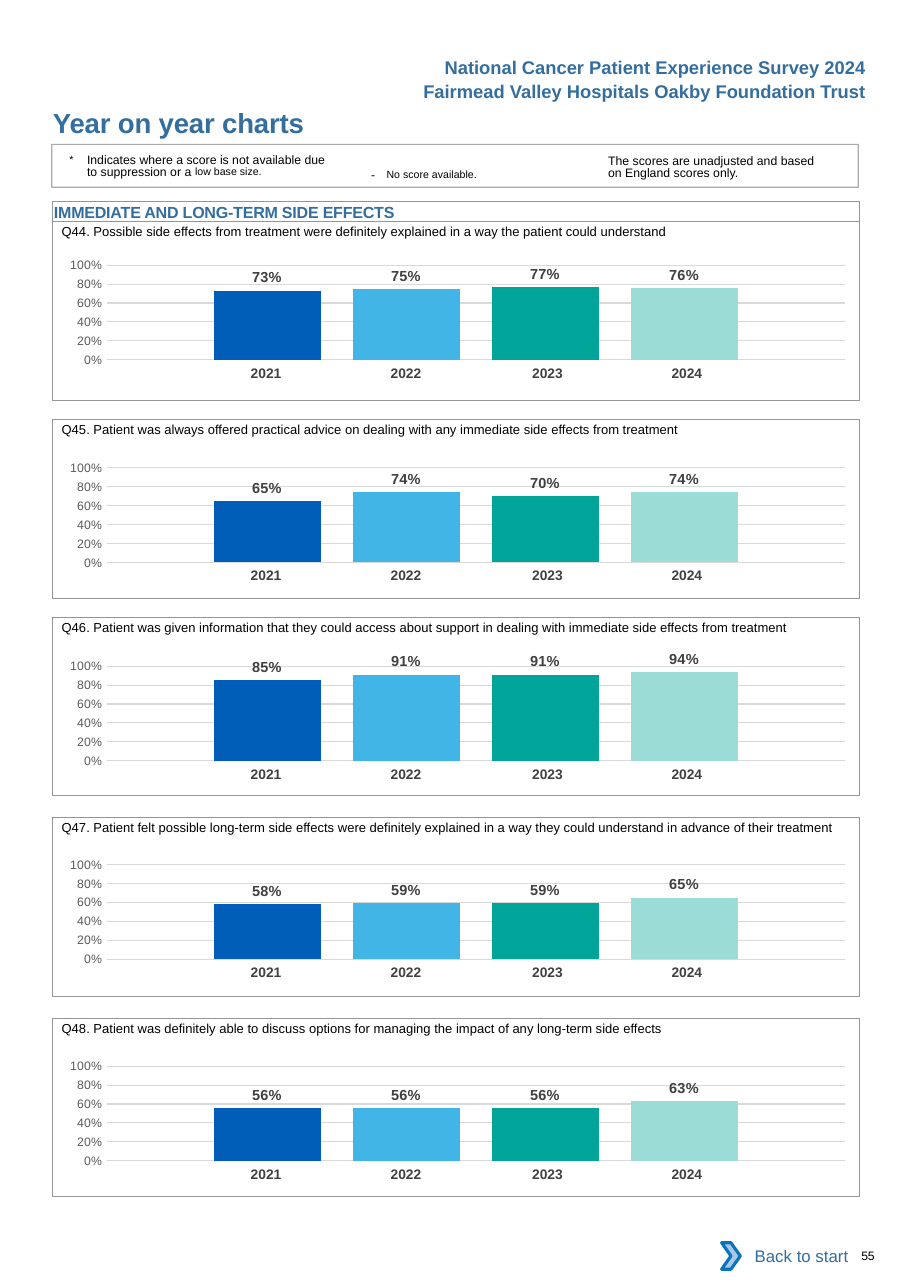
from lxml.etree import SubElement
from pptx import Presentation
from pptx.chart.data import CategoryChartData
from pptx.dml.color import RGBColor
from pptx.enum.chart import XL_CHART_TYPE, XL_LABEL_POSITION, XL_TICK_MARK
from pptx.enum.shapes import MSO_SHAPE
from pptx.enum.text import MSO_ANCHOR, PP_ALIGN
from pptx.oxml import parse_xml
from pptx.oxml.ns import nsdecls, qn
from pptx.util import Inches, Pt

BLUE = RGBColor(0x33, 0x6E, 0x9F)
BLACK = RGBColor(0, 0, 0)
WHITE = RGBColor(0xFF, 0xFF, 0xFF)
BORDER = RGBColor(0x93, 0x95, 0x98)
YEAR_GREY = RGBColor(0x41, 0x40, 0x42)
AXIS_GREY = RGBColor(0x59, 0x59, 0x59)
LABEL_GREY = RGBColor(0x40, 0x40, 0x40)
GRID_GREY = RGBColor(0xD9, 0xD9, 0xD9)
ARROW_FILL = RGBColor(0xA8, 0xC7, 0xE9)
ARROW_LINE = RGBColor(0x0A, 0x74, 0xBB)
YEAR_COLOURS = {
    "2021": RGBColor(0x00, 0x5E, 0xB8),
    "2022": RGBColor(0x41, 0xB6, 0xE6),
    "2023": RGBColor(0x00, 0xA4, 0x99),
    "2024": RGBColor(0x9C, 0xDC, 0xD7),
}
LEFT, WIDTH = 0.48, 7.32
PANEL_HEIGHT = 1.62

# Question, panel top, chart top, scores by year
QUESTIONS = [
    ("Q44. Possible side effects from treatment were definitely explained in a way "
     "the patient could understand", 2.01, 2.22, (0.73, 0.75, 0.77, 0.76)),
    ("Q45. Patient was always offered practical advice on dealing with any immediate "
     "side effects from treatment", 3.81, 4.06, (0.65, 0.74, 0.70, 0.74)),
    ("Q46. Patient was given information that they could access about support in "
     "dealing with immediate side effects from treatment",
     5.60, 5.86, (0.85, 0.91, 0.91, 0.94)),
    ("Q47. Patient felt possible long-term side effects were definitely explained in "
     "a way they could understand in advance of their treatment",
     7.42, 7.66, (0.58, 0.59, 0.59, 0.65)),
    ("Q48. Patient was definitely able to discuss options for managing the impact of "
     "any long-term side effects", 9.24, 9.49, (0.56, 0.56, 0.56, 0.63)),
]

prs = Presentation()
prs.slide_width, prs.slide_height = Inches(8.26), Inches(11.69)
s = prs.slides.add_slide(prs.slide_layouts[5])


def write(sp, runs, size, color=BLACK, bold=False, align=PP_ALIGN.LEFT,
          insets=(0, 0, 0, 0), anchor=MSO_ANCHOR.TOP, wrap=True):
    """Fill a shape with one paragraph; runs are (text, size, baseline %, spacing)."""
    tf = sp.text_frame
    sides = ("margin_left", "margin_top", "margin_right", "margin_bottom")
    for side, inset in zip(sides, insets):
        setattr(tf, side, Inches(inset))
    tf.word_wrap, tf.vertical_anchor = wrap, anchor
    p = tf.paragraphs[0]
    p.alignment = align
    for text, run_size, baseline, spacing in [(runs, size, 0, 0)] if isinstance(runs, str) else runs:
        r = p.add_run()
        r.text = text
        look = {"name": "Arial", "size": Pt(run_size), "bold": bold}
        for key, value in look.items():
            setattr(r.font, key, value)
        r.font.color.rgb = color
        rPr = r._r.get_or_add_rPr()
        for key, value in {"baseline": baseline * 1000, "spc": round(spacing * 100)}.items():
            if value:
                rPr.set(key, str(value))
    return p


def box(x, y, w, h, kind=MSO_SHAPE.RECTANGLE, fill=None, line=BORDER, weight=0.5):
    sp = s.shapes.add_shape(kind, Inches(x), Inches(y), Inches(w), Inches(h))
    sp.shadow.inherit = False
    for part, color in ((sp.fill, fill), (sp.line.fill, line)):
        if color is None:
            part.background()
        else:
            part.solid()
            part.fore_color.rgb = color
    if line is not None:
        sp.line.width = Pt(weight)
    return sp


# Page title
title = s.shapes.title
title.left, title.top, title.width, title.height = map(Inches, (0.47, 0.96, 4.5, 0.3))
write(title, [("Year on year charts", 18, 0, -0.1)], 18, BLUE, True, insets=(0.01, 0, 0, 0))

# Survey and trust names
for text, y in (("National Cancer Patient Experience Survey 2024", 0.46),
                ("Fairmead Valley Hospitals Oakby Foundation Trust", 0.68)):
    sp = s.shapes.add_textbox(Inches(3.67), Inches(y), Inches(4.29), Inches(0.3))
    write(sp, text, 12, BLUE, True, PP_ALIGN.RIGHT, (0.1, 0.05, 0.1, 0.05), wrap=False)

# Legend
legend = box(0.47, 1.31, WIDTH, 0.39, weight=0.75)
line_color = legend._element.spPr.find(qn("a:ln")).find(".//" + qn("a:srgbClr"))
SubElement(line_color, qn("a:alpha")).set("val", "80000")
sp = s.shapes.add_textbox(Inches(0.63), Inches(1.38), Inches(2.72), Inches(0.27))
p = write(sp, [("*\t", 12, 3, 0),
               ("Indicates where a score is not available due to suppression or a ", 8, 0, 0),
               ("low base size.", 12, 7, 0)], 8, insets=(0, 0.03, 0.33, 0))
p.line_spacing = Pt(8.1)
pPr = p._p.get_or_add_pPr()
pPr.set("marL", str(Inches(0.16)))
pPr.set("indent", str(-Inches(0.16)))
sp = s.shapes.add_textbox(Inches(3.27), Inches(1.41), Inches(1.83), Inches(0.24))
write(sp, [("- ", 8, 0, 2.6), ("No score available.", 12, 3, 0)], 8,
      insets=(0.1, 0.05, 0.1, 0.05))
sp = s.shapes.add_textbox(Inches(5.52), Inches(1.38), Inches(2.01), Inches(0.27))
p = write(sp, "The scores are unadjusted and based on England scores only.", 8,
          insets=(0, 0.03, 0, 0))
p.line_spacing = Pt(8.1)

# Section heading
write(box(LEFT, 1.83, WIDTH, 0.18), [("IMMEDIATE AND LONG-TERM SIDE EFFECTS", 10.5, 0, -0.1)],
      10.5, BLUE, True, insets=(0.01, 0.01, 0, 0))

for question, panel_top, chart_top, scores in QUESTIONS:
    # Panel and question
    box(LEFT, panel_top, WIDTH, PANEL_HEIGHT)
    sp = s.shapes.add_textbox(Inches(0.55), Inches(panel_top - 0.07), Inches(7.24), Inches(0.24))
    write(sp, question, 8.5, insets=(0.01, 0.09, 0, 0))

    # Column chart, one series a year
    data = CategoryChartData(number_format="0%")
    data.categories = ["1"]
    for year, score in zip(YEAR_COLOURS, scores):
        data.add_series(year, [score])
    chart = s.shapes.add_chart(XL_CHART_TYPE.COLUMN_CLUSTERED, Inches(0.39), Inches(chart_top),
                               Inches(WIDTH), Inches(1.29), data).chart
    chart.has_legend = chart.has_title = False
    chart.font.name, chart.font.size = "Calibri", Pt(10)
    chart.category_axis.visible = False
    axis = chart.value_axis
    axis.minimum_scale, axis.maximum_scale, axis.major_unit = 0, 1, 0.2
    axis.major_tick_mark = axis.minor_tick_mark = XL_TICK_MARK.NONE
    axis.format.line.fill.background()
    axis.major_gridlines.format.line.color.rgb = GRID_GREY
    axis.major_gridlines.format.line.width = Pt(0.75)
    labels = axis.tick_labels
    labels.number_format, labels.number_format_is_linked = "0%", False
    labels.font.name, labels.font.size = "Arial", Pt(8)
    labels.font.color.rgb = AXIS_GREY
    plot = chart.plots[0]
    plot.gap_width, plot.overlap, plot.vary_by_categories = 200, -30, False
    for series, color in zip(plot.series, YEAR_COLOURS.values()):
        series.format.fill.solid()
        series.format.fill.fore_color.rgb = color
        labels = series.data_labels
        look = {"show_value": True, "position": XL_LABEL_POSITION.OUTSIDE_END,
                "number_format": "0%", "number_format_is_linked": False}
        for key, value in look.items():
            setattr(labels, key, value)
        labels.font.name, labels.font.size, labels.font.bold = "Arial", Pt(9.5), True
        labels.font.color.rgb = LABEL_GREY

    # Fixed inner plot area
    area = chart._chartSpace.chart.plotArea
    for layout in area.findall(qn("c:layout")):
        area.remove(layout)
    settings = {"layoutTarget": "inner", "xMode": "edge", "yMode": "edge",
                "x": 0.079, "y": 0.145, "w": 0.915, "h": 0.666}
    marks = "".join(f'<c:{key} val="{value}"/>' for key, value in settings.items())
    area.insert(0, parse_xml(f'<c:layout {nsdecls("c")}><c:manualLayout>{marks}'
                             '</c:manualLayout></c:layout>'))

    # Year row below the columns
    table = s.shapes.add_table(1, 4, Inches(1.73), Inches(chart_top + 1.05),
                               Inches(5.15), Inches(0.27)).table
    table.first_row = table.horz_banding = False
    table._tbl.tblPr.find(qn("a:tableStyleId")).text = "{2D5ABB26-0587-4C30-8999-92F81FD0307C}"
    for i, (year, width, right) in enumerate(zip(YEAR_COLOURS, (1.27, 1.27, 1.34, 1.27),
                                                 (0, 0, 0.04, 0.12))):
        table.columns[i].width = Inches(width)
        cell = table.cell(0, i)
        cell.fill.background()
        cell.margin_left, cell.margin_right = Inches(0.1), Inches(right)
        p = cell.text_frame.paragraphs[0]
        p.text, p.alignment = year, PP_ALIGN.CENTER
        p.font.name, p.font.size, p.font.bold = "Arial", Pt(9), True
        p.font.color.rgb = YEAR_GREY

# Back to start and page number
write(box(6.62, 11.19, 1.18, 0.42, fill=WHITE, line=None), "Back to start", 11, BLUE,
      align=PP_ALIGN.RIGHT, insets=(0.1, 0.05, 0.1, 0.05), anchor=MSO_ANCHOR.MIDDLE)
box(6.55, 11.28, 0.17, 0.24, MSO_SHAPE.CHEVRON, ARROW_FILL, ARROW_LINE, 2)
sp = s.shapes.add_textbox(Inches(7.72), Inches(11.33), Inches(0.51), Inches(0.13))
write(sp, [("55", 8, 0, -0.2)], 8, insets=(0.1, 0, 0, 0))

prs.save("out.pptx")
